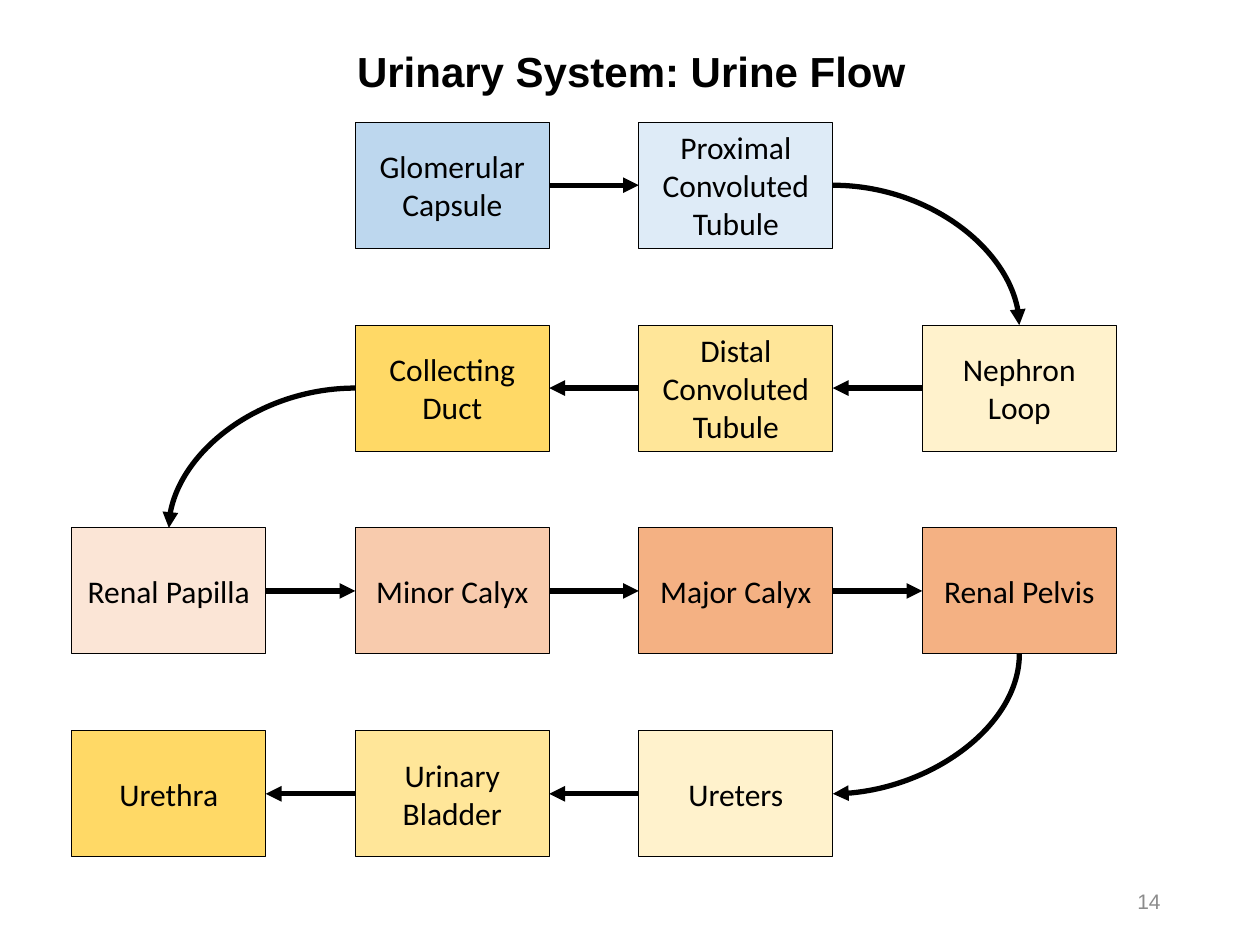
"""Build the urine flow slide: a winding chain of boxes joined by arrows."""
from pptx import Presentation
from pptx.dml.color import RGBColor
from pptx.enum.shapes import MSO_CONNECTOR as Conn, MSO_SHAPE as Shape
from pptx.enum.text import MSO_ANCHOR as Anchor, PP_ALIGN as Align
from pptx.oxml.ns import qn
from pptx.util import Inches, Pt
from lxml.etree import SubElement


def write(frame, text, size, font, color, align, bold=False):
    """Fill a text frame with one formatted run."""
    frame.word_wrap = True
    frame.vertical_anchor = Anchor.MIDDLE
    para = frame.paragraphs[0]
    para.alignment = align
    run = para.add_run()
    run.text = text
    run.font.size = Pt(size)
    run.font.name = font
    run.font.bold = bold
    run.font.color.rgb = RGBColor.from_string(color)
    return para


def arrow(kind, start, end):
    """Draw a thick black line with an arrowhead at its end."""
    line = slide.shapes.add_connector(kind, *map(Inches, start + end))
    line.line.width = Pt(3)
    line.line.color.rgb = RGBColor.from_string("000000")
    SubElement(line.line._get_or_add_ln(), qn("a:tailEnd"), type="triangle")
    props = line._element.spPr
    SubElement(props, qn("a:effectLst"))
    if kind == Conn.CURVE:
        props.find(qn("a:prstGeom")).set("prst", "curvedConnector2")
    return props


deck = Presentation()
deck.slide_width, deck.slide_height = Inches(10), Inches(7.5)
slide = deck.slides.add_slide(deck.slide_layouts[5])

title = slide.shapes.title
title.left, title.top = Inches(0.57), Inches(0.26)
title.width, title.height = Inches(8.88), Inches(0.65)
head = write(title.text_frame, "Urinary System: Urine Flow", 24, "Arial",
             "000000", Align.CENTER, True)
head.line_spacing = 0.9

num = slide.shapes.add_textbox(Inches(7.06), Inches(6.95), Inches(2.25), Inches(0.4))
write(num.text_frame, "14", 12, "Arial", "8C8C8C", Align.RIGHT)

left, top, step_x, step_y = 0.57, 0.97, 2.25, 1.61
wide, high = 1.54, 1
steps = [
    ("Glomerular Capsule", 1, 0, "BDD7EE"),
    ("Proximal Convoluted Tubule", 2, 0, "DEEBF7"),
    ("Nephron Loop", 3, 1, "FFF2CC"),
    ("Distal Convoluted Tubule", 2, 1, "FFE699"),
    ("Collecting Duct", 1, 1, "FFD966"),
    ("Renal Papilla", 0, 2, "FBE5D6"),
    ("Minor Calyx", 1, 2, "F8CBAD"),
    ("Major Calyx", 2, 2, "F4B183"),
    ("Renal Pelvis", 3, 2, "F4B183"),
    ("Ureters", 2, 3, "FFF2CC"),
    ("Urinary Bladder", 1, 3, "FFE699"),
    ("Urethra", 0, 3, "FFD966"),
]

spots = []
for name, col, row, fill in steps:
    x, y = left + col * step_x, top + row * step_y
    box = slide.shapes.add_shape(Shape.RECTANGLE, Inches(x), Inches(y),
                                 Inches(wide), Inches(high))
    box.shadow.inherit = False
    box.fill.solid()
    box.fill.fore_color.rgb = RGBColor.from_string(fill)
    box.line.color.rgb = RGBColor.from_string("000000")
    box.line.width = Pt(0.5)
    write(box.text_frame, name, 18, "Calibri", "000000", Align.CENTER)
    spots.append((x + wide / 2, y + high / 2))

for (x1, y1), (x2, y2) in zip(spots, spots[1:]):
    side = wide / 2 if x2 > x1 else -wide / 2
    if y1 == y2:
        arrow(Conn.STRAIGHT, (x1 + side, y1), (x2 - side, y2))
    elif (x1, y1) != spots[8]:
        arrow(Conn.CURVE, (x1 + side, y1), (x2, y2 - high / 2))
    else:
        y1, x2 = y1 + high / 2, x2 - side
        mid_x, mid_y = (x1 + x2) / 2, (y1 + y2) / 2
        half_x, half_y = (y2 - y1) / 2, (x1 - x2) / 2
        turn = arrow(Conn.CURVE, (mid_x - half_x, mid_y - half_y),
                     (mid_x + half_x, mid_y + half_y))
        turn.find(qn("a:xfrm")).set("rot", str(90 * 60000))

deck.save("out.pptx")
